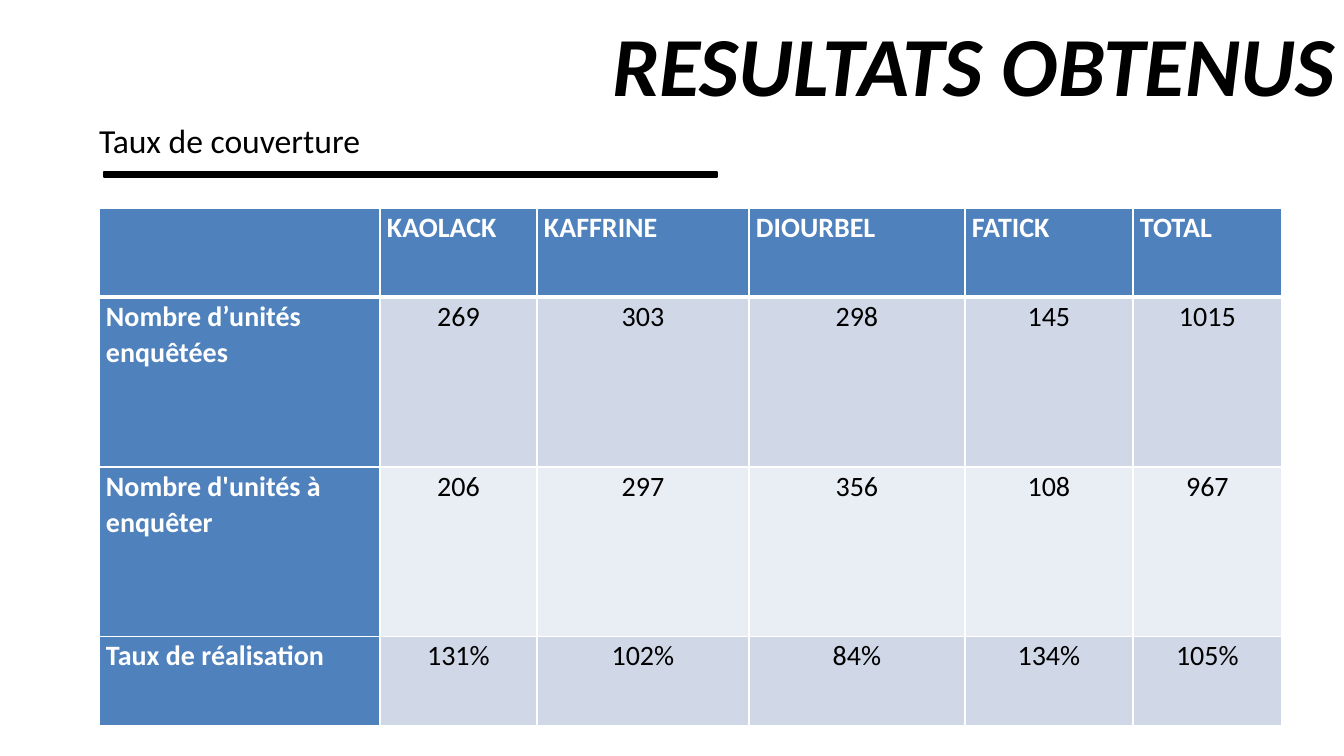
import pptx
import pptx.util
import pptx.dml.color
import pptx.enum.shapes
import pptx.enum.text
import lxml.etree

PX = 914400 / 100.8
COLORS = {"black": "000000", "white": "FFFFFF", "blue": "4F81BD",
          "band": "D0D8E8", "light": "E9EDF4"}
ALIGN = pptx.enum.text.PP_ALIGN


def px(*lengths):
    return [pptx.util.Emu(round(length * PX)) for length in lengths]


def write(frame, text, size=20, color="black", bold=False, italic=False,
          align=ALIGN.LEFT, spacing=1.0):
    paragraph = frame.paragraphs[0]
    paragraph.alignment = align
    paragraph.line_spacing = spacing
    paragraph.font.size = pptx.util.Pt(size)
    if text:
        run = paragraph.add_run()
        run.text = text
        run.font.name = "Calibri"
        run.font.size = pptx.util.Pt(size)
        run.font.bold = bold
        run.font.italic = italic
        run.font.color.rgb = pptx.dml.color.RGBColor.from_string(COLORS[color])


presentation = pptx.Presentation()
presentation.slide_width, presentation.slide_height = px(1344, 756)
slide = presentation.slides.add_slide(presentation.slide_layouts[6])

# Title
title = slide.shapes.add_textbox(*px(82, 20, 1263, 86)).text_frame
title.word_wrap = True
title.vertical_anchor = pptx.enum.text.MSO_ANCHOR.MIDDLE
write(title, "RESULTATS OBTENUS", size=60, bold=True, italic=True, align=ALIGN.RIGHT)

# Subtitle and its rule
subtitle = slide.shapes.add_textbox(*px(99, 120, 271, 40)).text_frame
subtitle.margin_left = subtitle.margin_right = 0
subtitle.margin_top = subtitle.margin_bottom = 0
subtitle.word_wrap = False
subtitle.auto_size = pptx.enum.text.MSO_AUTO_SIZE.SHAPE_TO_FIT_TEXT
write(subtitle, "Taux de couverture", size=24)

rule = slide.shapes.add_shape(pptx.enum.shapes.MSO_SHAPE.RECTANGLE, *px(104, 172, 613, 5))
rule.shadow.inherit = False
black = pptx.dml.color.RGBColor.from_string(COLORS["black"])
rule.fill.solid()
rule.fill.fore_color.rgb = black
rule.line.color.rgb = black
rule.line.width = pptx.util.Pt(2)

# Coverage table
rows = [
    ["", "KAOLACK", "KAFFRINE", "DIOURBEL", "FATICK", "TOTAL"],
    ["Nombre d’unités enquêtées", "269", "303", "298", "145", "1015"],
    ["Nombre d'unités à enquêter", "206", "297", "356", "108", "967"],
    ["Taux de réalisation", "131%", "102%", "84%", "134%", "105%"],
]
widths = [281, 157, 212, 216, 168, 149]
heights = [89, 170, 170, 89]
table = slide.shapes.add_table(len(rows), len(widths),
                               *px(99, 208, sum(widths), sum(heights))).table
for column, width in zip(table.columns, px(*widths)):
    column.width = width
for row, height in zip(table.rows, px(*heights)):
    row.height = height

for r, texts in enumerate(rows):
    for c, text in enumerate(texts):
        cell = table.cell(r, c)
        cell.margin_left, cell.margin_right = px(7, 7)
        cell.margin_top = cell.margin_bottom = 0
        heading = r == 0 or c == 0
        align = ALIGN.JUSTIFY if r == 0 else ALIGN.LEFT if c == 0 else ALIGN.CENTER
        write(cell.text_frame, text, color="white" if heading else "black",
              bold=heading, align=align, spacing=1.07)

        # White borders, thicker under the header row
        properties = cell._tc.get_or_add_tcPr()
        for side in "LRTB":
            thick = (r, side) in [(0, "B"), (1, "T")]
            properties.append(pptx.oxml.parse_xml(
                f'<a:ln{side} xmlns:a="http://schemas.openxmlformats.org/drawingml/2006/main" '
                f'w="{pptx.util.Pt(3 if thick else 1)}"><a:solidFill>'
                f'<a:srgbClr val="{COLORS["white"]}"/></a:solidFill></a:ln{side}>'))
        fill = "blue" if heading else "band" if r % 2 else "light"
        cell.fill.solid()
        cell.fill.fore_color.rgb = pptx.dml.color.RGBColor.from_string(COLORS[fill])

presentation.save("out.pptx")
